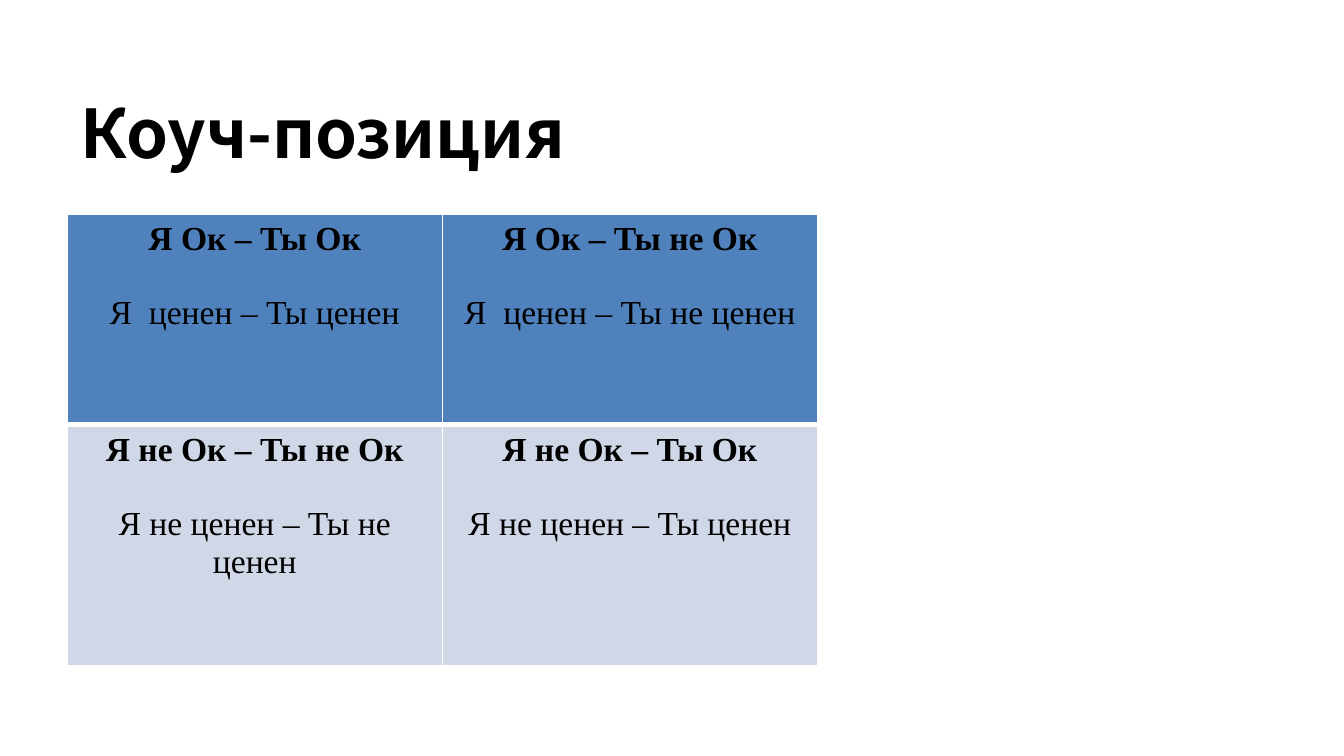
"""Build a slide with a two-by-two table of coaching positions."""
from dataclasses import dataclass

from lxml import etree
from pptx import Presentation
from pptx.dml.color import RGBColor
from pptx.enum.text import MSO_ANCHOR, MSO_AUTO_SIZE, PP_ALIGN
from pptx.oxml.ns import qn
from pptx.slide import Slide
from pptx.table import _Cell
from pptx.text.text import _Paragraph
from pptx.util import Pt

LEFT, CENTER = PP_ALIGN.LEFT, PP_ALIGN.CENTER
MIDDLE = MSO_ANCHOR.MIDDLE
NO_AUTOFIT = MSO_AUTO_SIZE.NONE
TITLE_ONLY = 5


@dataclass(frozen=True)
class Theme:
    ink: str = "000000"
    border: str = "FFFFFF"
    blue: str = "4F81BD"
    pale: str = "D0D8E8"
    title_font: str = "Noto Sans CJK KR"
    body_font: str = "Times New Roman"
    title_size: float = 36
    body_size: float = 18
    thin: float = 1
    thick: float = 3
    gap: float = 20


@dataclass(frozen=True)
class Position:
    heading: str
    meaning: str


@dataclass(frozen=True)
class Row:
    height: float
    fill: str
    top: float
    bottom: float
    positions: tuple[Position, ...]


THEME = Theme()
COLUMN_WIDTH = 201
ROWS = (
    Row(113, THEME.blue, THEME.thin, THEME.thick, (
        Position("Я Ок – Ты Ок", "Я  ценен – Ты ценен"),
        Position("Я Ок – Ты не Ок", "Я  ценен – Ты не ценен"),
    )),
    Row(129, THEME.pale, THEME.thick, THEME.thin, (
        Position("Я не Ок – Ты не Ок", "Я не ценен – Ты не ценен"),
        Position("Я не Ок – Ты Ок", "Я не ценен – Ты ценен"),
    )),
)


def add_text(para: _Paragraph, text: str, font: str, size: float, bold: bool) -> None:
    """Add one formatted run to a paragraph."""
    span = para.add_run()
    span.text = text
    span.font.name = font
    span.font.size = Pt(size)
    span.font.bold = bold
    span.font.color.rgb = RGBColor.from_string(THEME.ink)


def set_borders(cell: _Cell, row: Row) -> None:
    """Draw the white borders of a cell."""
    properties = cell._tc.get_or_add_tcPr()
    widths = {"L": THEME.thin, "R": THEME.thin, "T": row.top, "B": row.bottom}
    for side, width in widths.items():
        line = etree.SubElement(properties, qn(f"a:ln{side}"), w=str(Pt(width)))
        fill = etree.SubElement(line, qn("a:solidFill"))
        etree.SubElement(fill, qn("a:srgbClr"), val=THEME.border)


def fill_cell(cell: _Cell, row: Row, position: Position) -> None:
    """Format a cell and write its heading and meaning."""
    set_borders(cell, row)
    cell.fill.solid()
    cell.fill.fore_color.rgb = RGBColor.from_string(row.fill)
    heading = cell.text_frame.paragraphs[0]
    meaning = cell.text_frame.add_paragraph()
    meaning.space_before = Pt(THEME.gap)
    heading.alignment = meaning.alignment = CENTER
    add_text(heading, position.heading, THEME.body_font, THEME.body_size, True)
    add_text(meaning, position.meaning, THEME.body_font, THEME.body_size, False)


def add_title(page: Slide, text: str) -> None:
    """Place and format the title placeholder."""
    box = page.shapes.title
    box.left, box.top, box.width, box.height = Pt(36), Pt(36.7), Pt(648), Pt(67.7)
    frame = box.text_frame
    frame.auto_size = NO_AUTOFIT
    frame.vertical_anchor = MIDDLE
    para = frame.paragraphs[0]
    para.alignment = LEFT
    add_text(para, text, THEME.title_font, THEME.title_size, True)


def add_positions(page: Slide, rows: tuple[Row, ...]) -> None:
    """Add the table of positions."""
    columns = len(rows[0].positions)
    height = sum(row.height for row in rows)
    table = page.shapes.add_table(
        len(rows), columns, Pt(36), Pt(114.5), Pt(columns * COLUMN_WIDTH), Pt(height)
    ).table
    table.first_row = table.horz_banding = False
    for column in table.columns:
        column.width = Pt(COLUMN_WIDTH)
    for row_index, row in enumerate(rows):
        table.rows[row_index].height = Pt(row.height)
        for column_index, position in enumerate(row.positions):
            fill_cell(table.cell(row_index, column_index), row, position)


def main() -> None:
    """Build and save the deck."""
    deck = Presentation()
    deck.slide_width, deck.slide_height = Pt(720), Pt(405)
    page = deck.slides.add_slide(deck.slide_layouts[TITLE_ONLY])
    add_title(page, "Коуч-позиция")
    add_positions(page, ROWS)
    deck.save("out.pptx")


if __name__ == "__main__":
    main()
